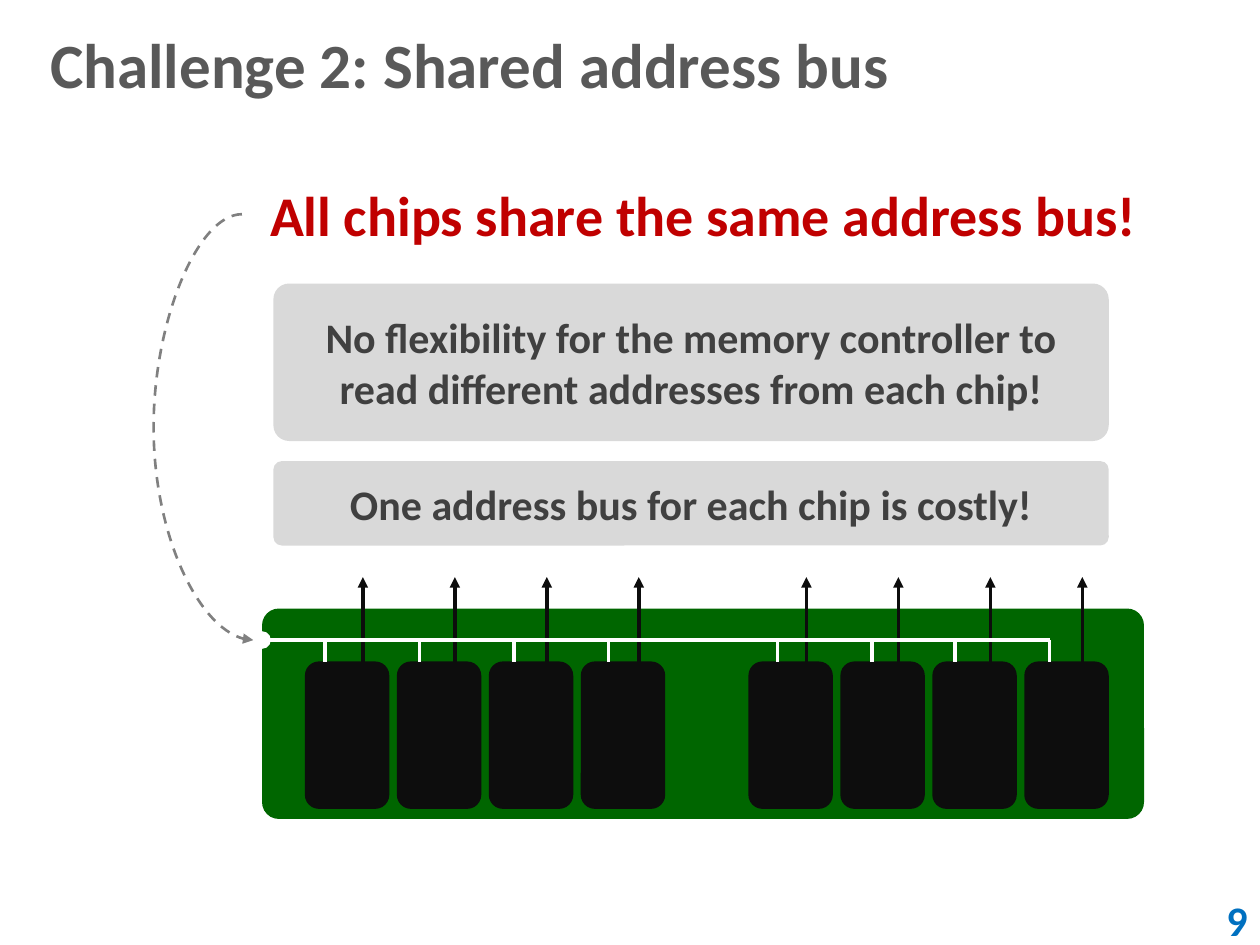
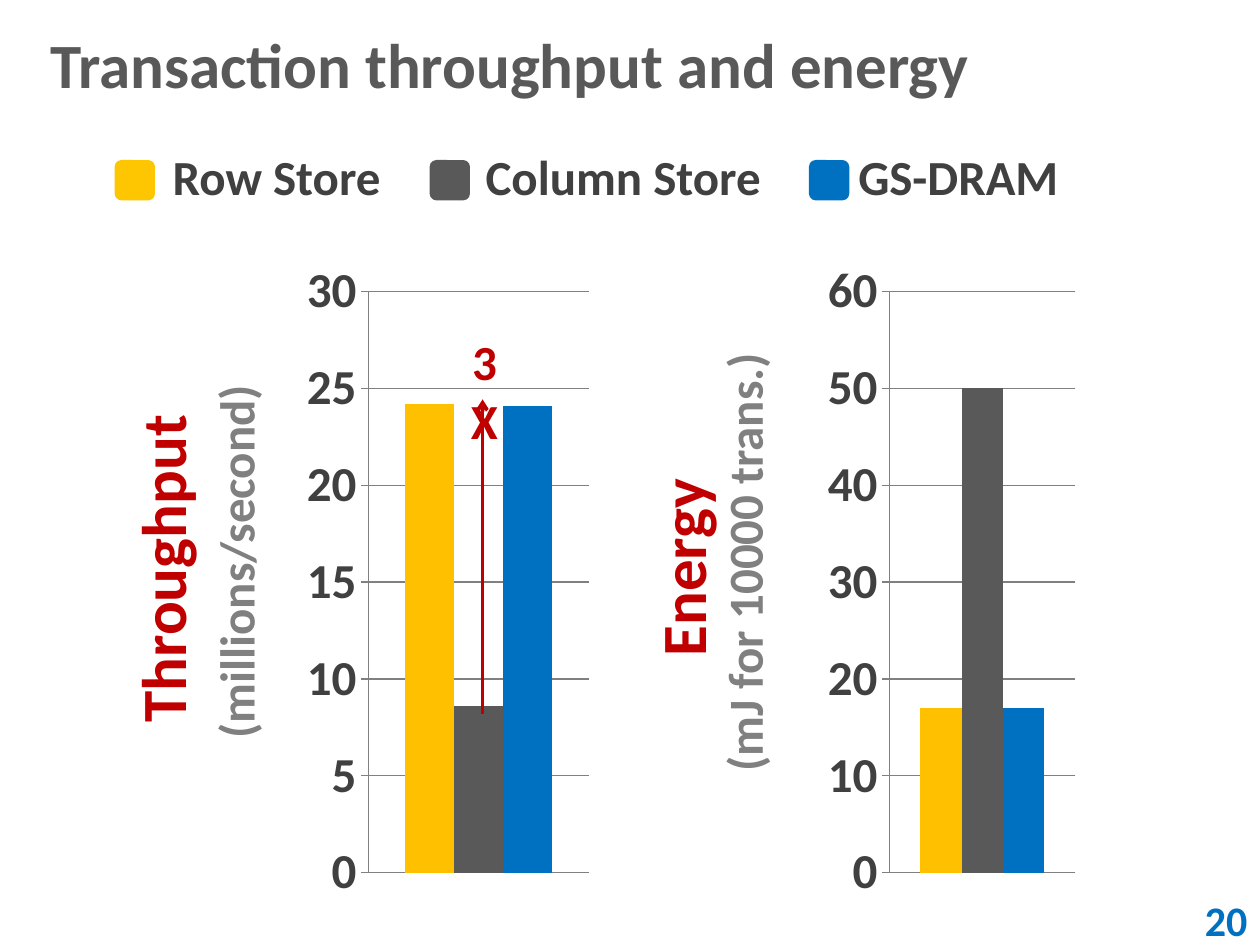
from lxml import etree
from pptx import Presentation
from pptx import util as u
from pptx.chart import data as chart_data
from pptx.dml import color as dml_color
from pptx.enum import chart as chart_enum, dml, shapes, text
from pptx.oxml import ns

COLORS = {
    "title": "595959", "page": "0070C0", "white": "FFFFFF", "red": "C00000",
    "panel": "D9D9D9", "dark": "404040", "gray": "808080", "board": "006600",
    "chip": "0D0D0D", "row": "FFC000", "row_key": "FDC600",
    "column": "595959", "gather": "0070C0",
}
FONT = "Calibri"
RGB = {name: dml_color.RGBColor.from_string(value) for name, value in COLORS.items()}
RECTANGLE = shapes.MSO_SHAPE.RECTANGLE
ROUNDED = shapes.MSO_SHAPE.ROUNDED_RECTANGLE
CENTER, LEFT, RIGHT = text.PP_ALIGN.CENTER, text.PP_ALIGN.LEFT, text.PP_ALIGN.RIGHT
TOP, MIDDLE = text.MSO_ANCHOR.TOP, text.MSO_ANCHOR.MIDDLE


def write(shape, words="", size=24, color="dark", fill=None, align=CENTER,
          anchor=MIDDLE, wrap=True, spacing=None, new_paragraph=False):
    """Fill a shape if asked, and add a run of text to it."""
    if fill:
        shape.shadow.inherit = False
        shape.fill.solid()
        shape.fill.fore_color.rgb = RGB[fill]
        shape.line.fill.background()
    if words:
        frame = shape.text_frame
        frame.word_wrap = wrap
        frame.vertical_anchor = anchor
        paragraph = frame.add_paragraph() if new_paragraph else frame.paragraphs[-1]
        paragraph.alignment = align
        paragraph.line_spacing = spacing
        run = paragraph.add_run()
        run.text = words
        run.font.name, run.font.size, run.font.bold = FONT, u.Pt(size), True
        run.font.color.rgb = RGB[color]
    return shape


def add_line(slide, start, end, color, width=2, head=None, dash=None,
             kind=shapes.MSO_CONNECTOR.STRAIGHT):
    line = slide.shapes.add_connector(kind, *map(u.Inches, start + end))
    line.line.color.rgb = RGB[color]
    line.line.width = u.Pt(width)
    if dash:
        line.line.dash_style = dash
    properties = line._element.spPr
    if head:
        outline = properties.find(ns.qn("a:ln"))
        etree.SubElement(outline, ns.qn("a:tailEnd"), type=head)
    etree.SubElement(properties, ns.qn("a:effectLst"))
    return line


presentation = Presentation()
presentation.slide_width, presentation.slide_height = u.Inches(10), u.Inches(7.5)

# Titles and page numbers
slides = []
for title_text, page in (("Challenge 2: Shared address bus", "9"),
                         ("Transaction throughput and energy", "20")):
    slide = presentation.slides.add_slide(presentation.slide_layouts[5])
    title = slide.shapes.title
    title.left, title.top, title.width, title.height = map(u.Inches, (0, 0, 10, 1))
    title.text_frame.margin_left = u.Inches(0.4)
    write(title, title_text, size=36, color="title", align=LEFT)
    page_box = slide.shapes.add_shape(RECTANGLE, *map(u.Inches, (8, 7.1, 2, 0.4)))
    write(page_box, page, color="page", fill="white", align=RIGHT)
    slides.append(slide)
bus_slide, results_slide = slides

# Headline with a curved arrow down to the bus
BUS_Y, CHIP_TOP = 5.08, 5.25
headline = bus_slide.shapes.add_textbox(*map(u.Inches, (1.92, 1.38, 7.33, 0.64)))
write(headline, "All chips share the same address bus!", size=32, color="red", anchor=TOP)
curve = add_line(bus_slide, (1.92, 1.7), (2.01, BUS_Y), "gray", 1.5, "triangle",
                 dml.MSO_LINE.DASH, shapes.MSO_CONNECTOR.CURVE)
curve.begin_connect(headline, 1)
guides = curve._element.spPr.find(ns.qn("a:prstGeom")).get_or_add_avLst()
etree.SubElement(guides, ns.qn("a:gd"), name="adj1", fmla="val -778000")

# Statement panels
for top, height, statement in (
        (2.25, 1.25, "No flexibility for the memory controller to "
                     "read different addresses from each chip!"),
        (3.66, 0.67, "One address bus for each chip is costly!")):
    panel = bus_slide.shapes.add_shape(ROUNDED, *map(u.Inches, (2.17, top, 6.63, height)))
    panel.adjustments[0] = 0.1
    write(panel, statement, fill="panel")

# Memory board with two banks of four chips
board = bus_slide.shapes.add_shape(ROUNDED, *map(u.Inches, (2.08, 4.83, 7, 1.67)))
board.adjustments[0] = 0.08
write(board, fill="board")
for bank_left in (2.42, 5.94):
    for index in range(4):
        left = bank_left + 0.73 * index
        add_line(bus_slide, (left + 0.46, CHIP_TOP), (left + 0.46, 4.58), "chip",
                 head="triangle")
        chip = bus_slide.shapes.add_shape(
            ROUNDED, *map(u.Inches, (left, CHIP_TOP, 0.67, 1.17)))
        write(chip, fill="chip")

# Shared address bus and its taps
bus_entry = bus_slide.shapes.add_shape(
    shapes.MSO_SHAPE.OVAL, *map(u.Inches, (2.01, 5.01, 0.14, 0.14)))
write(bus_entry, fill="white")
for tap_x in (2.58, 3.33, 4.08, 4.83, 6.17, 6.92, 7.58, 8.33):
    add_line(bus_slide, (tap_x, BUS_Y), (tap_x, CHIP_TOP), "white")
add_line(bus_slide, (2.08, BUS_Y), (8.33, BUS_Y), "white", 2.25)

# Throughput and energy charts
for left, values, maximum, step, plot_area in (
        (2.25, (24.2, 8.6, 24.1), 30, 5, (0.27, 0.045, 0.7, 0.91)),
        (6.16, (17, 50, 17), 60, 10, (0.36, 0.045, 0.59, 0.91))):
    data = chart_data.CategoryChartData()
    data.categories = ["1"]
    for number, value in enumerate(values, 1):
        data.add_series(f"Series {number}", [value])
    chart = results_slide.shapes.add_chart(
        chart_enum.XL_CHART_TYPE.COLUMN_CLUSTERED,
        *map(u.Inches, (left, 2.08, 2.5, 5.08)), data).chart
    chart.has_legend = chart.has_title = False
    chart.font.name, chart.font.size, chart.font.bold = FONT, u.Pt(40), True
    chart.category_axis.visible = False
    axis = chart.value_axis
    axis.minimum_scale, axis.maximum_scale, axis.major_unit = 0, maximum, step
    axis.major_tick_mark = chart_enum.XL_TICK_MARK.OUTSIDE
    axis.has_major_gridlines = True
    for line_format in (axis.format.line, axis.major_gridlines.format.line):
        line_format.color.rgb = RGB["gray"]
        line_format.width = u.Pt(0.75)
    labels = axis.tick_labels.font
    labels.name, labels.size, labels.bold = FONT, u.Pt(28), True
    labels.color.rgb = RGB["dark"]
    plot = chart.plots[0]
    plot.gap_width, plot.overlap, plot.vary_by_categories = 150, 0, False
    for series, color in zip(plot.series, ("row", "column", "gather")):
        series.format.fill.solid()
        series.format.fill.fore_color.rgb = RGB[color]

    # Fixed inner plot area
    plot_element = chart._chartSpace.chart.plotArea
    for old_layout in plot_element.findall(ns.qn("c:layout")):
        plot_element.remove(old_layout)
    layout = etree.Element(ns.qn("c:layout"))
    plot_element.insert(0, layout)
    manual = etree.SubElement(layout, ns.qn("c:manualLayout"))
    settings = [("layoutTarget", "inner"), ("xMode", "edge"), ("yMode", "edge")]
    settings += zip("xywh", plot_area)
    for tag, setting in settings:
        etree.SubElement(manual, ns.qn(f"c:{tag}"), val=str(setting))

# Rotated axis captions
for at, quantity, unit_runs in (
        ((-0.95, 3.92, 5.09, 1.19), "Throughput",
         ((" ", 36, "red"), ("(millions/second)", 28, "gray"))),
        ((3.12, 3.97, 5.09, 1.07), "Energy",
         ((" (mJ for 10000 trans.)", 28, "gray"),))):
    caption = results_slide.shapes.add_textbox(*map(u.Inches, at))
    caption.rotation = 270
    write(caption, quantity, size=36, color="red", anchor=TOP, spacing=0.9)
    for index, (words, size, color) in enumerate(unit_runs):
        write(caption, words, size=size, color=color, anchor=TOP, spacing=0.9,
              new_paragraph=index == 0)

# Legend
for name, color, key_left, label_left, label_width in (
        ("Row Store", "row_key", 0.91, 1.26, 1.87),
        ("GS-DRAM", "gather", 6.42, 6.7, 1.81),
        ("Column Store", "column", 3.41, 3.74, 2.41)):
    label = results_slide.shapes.add_textbox(
        *map(u.Inches, (label_left, 1.11, label_width, 0.57)))
    write(label, name, size=28, anchor=TOP, wrap=False)
    key = results_slide.shapes.add_shape(
        ROUNDED, *map(u.Inches, (key_left, 1.27, 0.32, 0.32)))
    write(key, fill=color)

# Speedup arrow
add_line(results_slide, (3.83, 5.67), (3.83, 3.17), "red", head="arrow")
speedup = results_slide.shapes.add_textbox(*map(u.Inches, (3.58, 2.58, 0.53, 0.57)))
write(speedup, "3X", size=28, color="red", anchor=TOP)

presentation.save("out.pptx")
